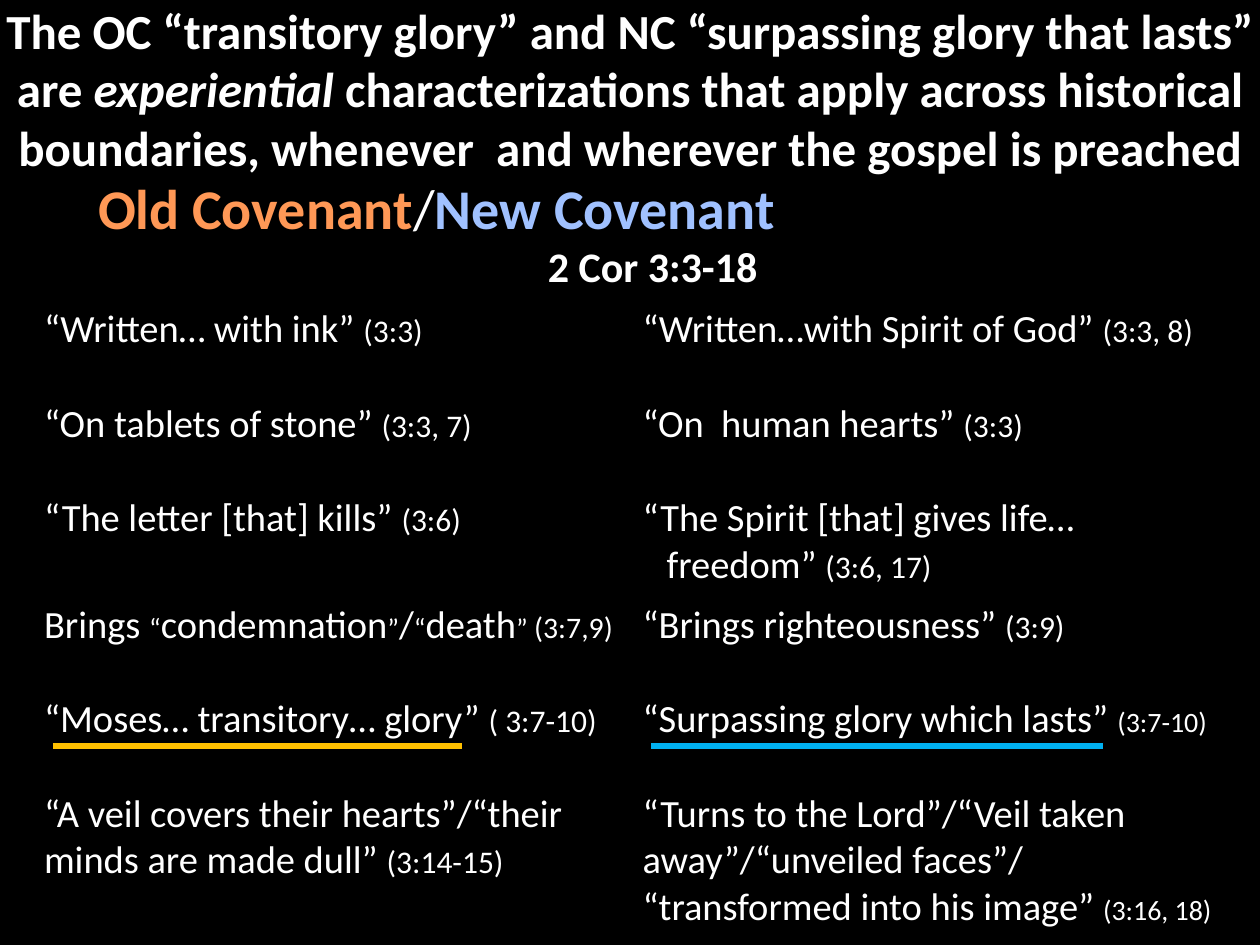
from pptx import Presentation
from pptx.dml.color import RGBColor
from pptx.enum.shapes import MSO_CONNECTOR
from pptx.enum.text import MSO_ANCHOR, PP_ALIGN
from pptx.oxml.ns import qn
from pptx.util import Inches, Pt
from lxml import etree

STRAIGHT = MSO_CONNECTOR.STRAIGHT
TOP = MSO_ANCHOR.TOP
LEFT, CENTER = PP_ALIGN.LEFT, PP_ALIGN.CENTER

BLACK = RGBColor(0x00, 0x00, 0x00)
WHITE = RGBColor(0xFF, 0xFF, 0xFF)
ORANGE = RGBColor(0xFF, 0x98, 0x56)
PALE_BLUE = RGBColor(0xA0, 0xC1, 0xFF)
GOLD = RGBColor(0xFF, 0xC0, 0x00)
SKY = RGBColor(0x00, 0xB0, 0xF0)

FONT = "Calibri"
WIDTH, HEIGHT = 10, 7.5
MARGIN = WIDTH / 40
COLUMN = (WIDTH - 2 * MARGIN) / 2
ROW = HEIGHT / 10
TABLE_TOP = 2.38
HANGING = 0.19
UNDERLINE_Y = 5.92
PLAIN_GRID = "{2D5ABB26-0587-4C30-8999-92F81FD0307C}"

CONTRASTS = [
    (HANGING, [("“Written… with ink” ", 22), ("(3:3)", 18)],
     [("“Written…with Spirit of God” ", 22), ("(3:3, 8)", 18)]),
    (HANGING, [("“On tablets of stone” ", 22), ("(3:3, 7)", 18)],
     [("“On  human hearts” ", 22), ("(3:3)", 18)]),
    (HANGING, [("“The letter [that] kills” ", 22), ("(3:6)", 18)],
     [("“The Spirit [that] gives life… freedom” ", 22), ("(3:6, 17)", 18)]),
    (0, [("Brings ", 22), ("“", 16), ("condemnation", 22), ("”", 16), ("/", 22),
         ("“", 16), ("death", 22), ("” ", 16), ("(3:7,9)", 17)],
     [("“Brings righteousness” ", 22), ("(3:9)", 18)]),
    (HANGING, [("“Moses… transitory… glory” ", 22), ("( 3:7-10)", 18)],
     [("“Surpassing glory which lasts” ", 22), ("(3:7-10)", 16)]),
    (0, [("“A veil covers their hearts”/“their minds are made dull” ", 22), ("(3:14-15)", 18)],
     [("“Turns to the Lord”/“Veil taken away”/“unveiled faces”/ “transformed into his image” ", 22),
      ("(3:16, 18)", 16)]),
]


def add_span(para, text, size, color=WHITE, bold=False, italic=False):
    span = para.add_run()
    span.text = text
    font = span.font
    font.name, font.size = FONT, Pt(size)
    font.bold, font.italic = bold, italic
    font.color.rgb = color


def format_para(para, align=LEFT, margin=0, indent=0):
    para.alignment = align
    para.space_before = Pt(0)
    properties = para._p.get_or_add_pPr()
    properties.set("marL", str(Inches(margin)))
    properties.set("indent", str(Inches(indent)))


def set_title(page):
    title = page.shapes.title
    title.left, title.top = 0, 0
    title.width, title.height = Inches(WIDTH), Inches(HEIGHT / 6)
    frame = title.text_frame
    frame.word_wrap = True
    frame.vertical_anchor = TOP
    frame.margin_left = frame.margin_right = frame.margin_top = frame.margin_bottom = 0
    para = frame.paragraphs[0]
    format_para(para, CENTER)
    add_span(para, "The OC “transitory glory” and NC “surpassing glory that lasts” are ", 28, bold=True)
    add_span(para, "experiential", 28, bold=True, italic=True)
    add_span(para, " characterizations that apply across historical boundaries, "
             "whenever  and wherever the gospel is preached", 28, bold=True)


def add_heading(page):
    box = page.shapes.add_textbox(Inches(0.5), Inches(1.33), Inches(9), Inches(1.17))
    frame = box.text_frame
    frame.word_wrap = True
    covenants = frame.paragraphs[0]
    format_para(covenants, margin=0.18)
    add_span(covenants, "Old Covenant", 32, ORANGE, bold=True)
    add_span(covenants, "/", 32)
    add_span(covenants, "New Covenant", 32, PALE_BLUE, bold=True)
    passage = frame.add_paragraph()
    format_para(passage, CENTER, margin=0.36)
    add_span(passage, "2 Cor 3:3-18", 24, bold=True)


def add_contrast_table(page):
    count = len(CONTRASTS)
    table = page.shapes.add_table(count, 2, Inches(MARGIN), Inches(TABLE_TOP),
                                  Inches(2 * COLUMN), Inches(count * ROW)).table
    table.first_row = table.horz_banding = False
    table._tbl.tblPr.find(qn("a:tableStyleId")).text = PLAIN_GRID
    for row, (hanging, *sides) in enumerate(CONTRASTS):
        for column, spans in enumerate(sides):
            cell = table.cell(row, column)
            cell.fill.background()
            para = cell.text_frame.paragraphs[0]
            format_para(para, margin=hanging, indent=-hanging)
            for text, size in spans:
                add_span(para, text, size)


def add_underline(page, start, end, color):
    line = page.shapes.add_connector(STRAIGHT, Inches(start), Inches(UNDERLINE_Y),
                                     Inches(end), Inches(UNDERLINE_Y))
    line.line.color.rgb = color
    line.line.width = Pt(3)
    etree.SubElement(line._element.spPr, qn("a:effectLst"))


def main():
    deck = Presentation()
    deck.slide_width, deck.slide_height = Inches(WIDTH), Inches(HEIGHT)
    page = deck.slides.add_slide(deck.slide_layouts[5])
    page.background.fill.solid()
    page.background.fill.fore_color.rgb = BLACK
    set_title(page)
    add_contrast_table(page)
    add_heading(page)
    add_underline(page, 0.42, 3.67, GOLD)
    add_underline(page, 5.17, 8.75, SKY)
    deck.save("out.pptx")


if __name__ == "__main__":
    main()
